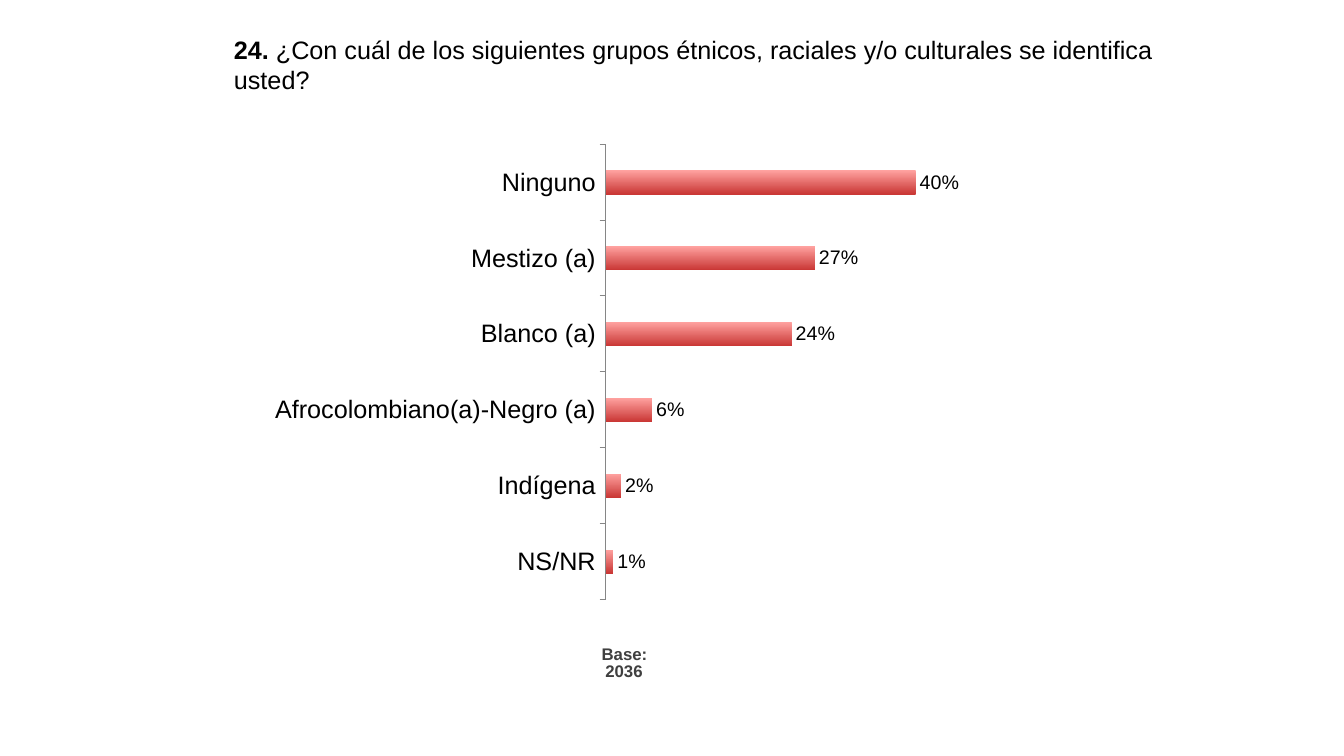
from dataclasses import dataclass
from lxml.etree import SubElement
from pptx import Presentation
from pptx.chart.chart import Chart
from pptx.chart.data import CategoryChartData
from pptx.dml.color import RGBColor
from pptx.enum.chart import XL_CHART_TYPE, XL_LABEL_POSITION, XL_TICK_MARK
from pptx.enum.text import PP_ALIGN
from pptx.oxml.ns import qn
from pptx.slide import Slide
from pptx.util import Pt

FONT = "Arial"
BLACK = RGBColor(0x00, 0x00, 0x00)
GREY = RGBColor(0x3F, 0x3F, 0x3F)
RULE = RGBColor(0x86, 0x86, 0x86)
PINK = RGBColor(0xFF, 0xA2, 0xA0)
RED = RGBColor(0xCA, 0x38, 0x36)


@dataclass(frozen=True)
class Note:
    left: float
    top: float
    width: float
    height: float
    size: float
    color: RGBColor
    align: PP_ALIGN
    space: float
    runs: tuple[tuple[str, bool], ...]


@dataclass(frozen=True)
class Group:
    name: str
    share: float


NOTES = (
    Note(160, 20.7, 677.5, 52, 18, BLACK, PP_ALIGN.LEFT, 1,
         (("24.", True),
          (" ¿Con cuál de los siguientes grupos étnicos, raciales y/o "
           "culturales se identifica usted?", False))),
    Note(397.5, 458.6, 72, 17.3, 12, GREY, PP_ALIGN.RIGHT, 0.83,
         (("Base: 2036 ", True),)),
)

GROUPS = (
    Group("NS/NR", 0.01),
    Group("Indígena", 0.02),
    Group("Afrocolombiano(a)-Negro (a)", 0.06),
    Group("Blanco (a)", 0.24),
    Group("Mestizo (a)", 0.27),
    Group("Ninguno", 0.4),
)


def add_note(slide: Slide, note: Note) -> None:
    box = slide.shapes.add_textbox(
        Pt(note.left), Pt(note.top), Pt(note.width), Pt(note.height))
    frame = box.text_frame
    frame.word_wrap = True
    line = frame.paragraphs[0]
    line.alignment = note.align
    line.line_spacing = note.space
    line.font.name = FONT
    line.font.size = Pt(note.size)
    line.font.color.rgb = note.color
    for text, bold in note.runs:
        run = line.add_run()
        run.text = text
        run.font.bold = bold


def place_plot(chart: Chart) -> None:
    area = chart._chartSpace.chart.plotArea
    for old in area.findall(qn("c:layout")):
        area.remove(old)
    layout = SubElement(area, qn("c:layout"))
    area.insert(0, layout)
    manual = SubElement(layout, qn("c:manualLayout"))
    parts = (("layoutTarget", "inner"), ("xMode", "edge"), ("yMode", "edge"),
             ("x", "0.456"), ("y", "0.032"), ("w", "0.48"), ("h", "0.937"))
    for name, value in parts:
        SubElement(manual, qn(f"c:{name}")).set("val", value)


def add_bars(slide: Slide, groups: tuple[Group, ...]) -> None:
    data = CategoryChartData(number_format="0%")
    data.categories = [group.name for group in groups]
    data.add_series("Series 1", [group.share for group in groups])
    chart = slide.shapes.add_chart(
        XL_CHART_TYPE.BAR_CLUSTERED,
        Pt(196), Pt(92), Pt(519), Pt(347), data).chart
    chart.has_legend = False
    chart.has_title = False
    chart.font.name = FONT
    chart.font.size = Pt(18)
    chart.font.color.rgb = BLACK
    place_plot(chart)

    names = chart.category_axis
    names.major_tick_mark = XL_TICK_MARK.OUTSIDE
    names.format.line.color.rgb = RULE
    names.format.line.width = Pt(0.75)
    scale = chart.value_axis
    scale.visible = False
    scale.has_major_gridlines = False
    scale.minimum_scale = 0
    scale.maximum_scale = 0.45

    plot = chart.plots[0]
    plot.gap_width = 219
    plot.vary_by_categories = False
    fill = plot.series[0].format.fill
    fill.gradient()
    fill.gradient_angle = 270
    for stop, color in zip(fill.gradient_stops, (PINK, RED)):
        stop.color.rgb = color

    labels = plot.series[0].data_labels
    labels.show_value = True
    labels.position = XL_LABEL_POSITION.OUTSIDE_END
    labels.number_format = "0%"
    labels.number_format_is_linked = False
    labels.font.name = FONT
    labels.font.size = Pt(14)
    labels.font.color.rgb = BLACK


def main() -> None:
    deck = Presentation()
    deck.slide_width = Pt(960)
    deck.slide_height = Pt(540)
    slide = deck.slides.add_slide(deck.slide_layouts[6])
    for note in NOTES:
        add_note(slide, note)
    add_bars(slide, GROUPS)
    deck.save("out.pptx")


if __name__ == "__main__":
    main()
